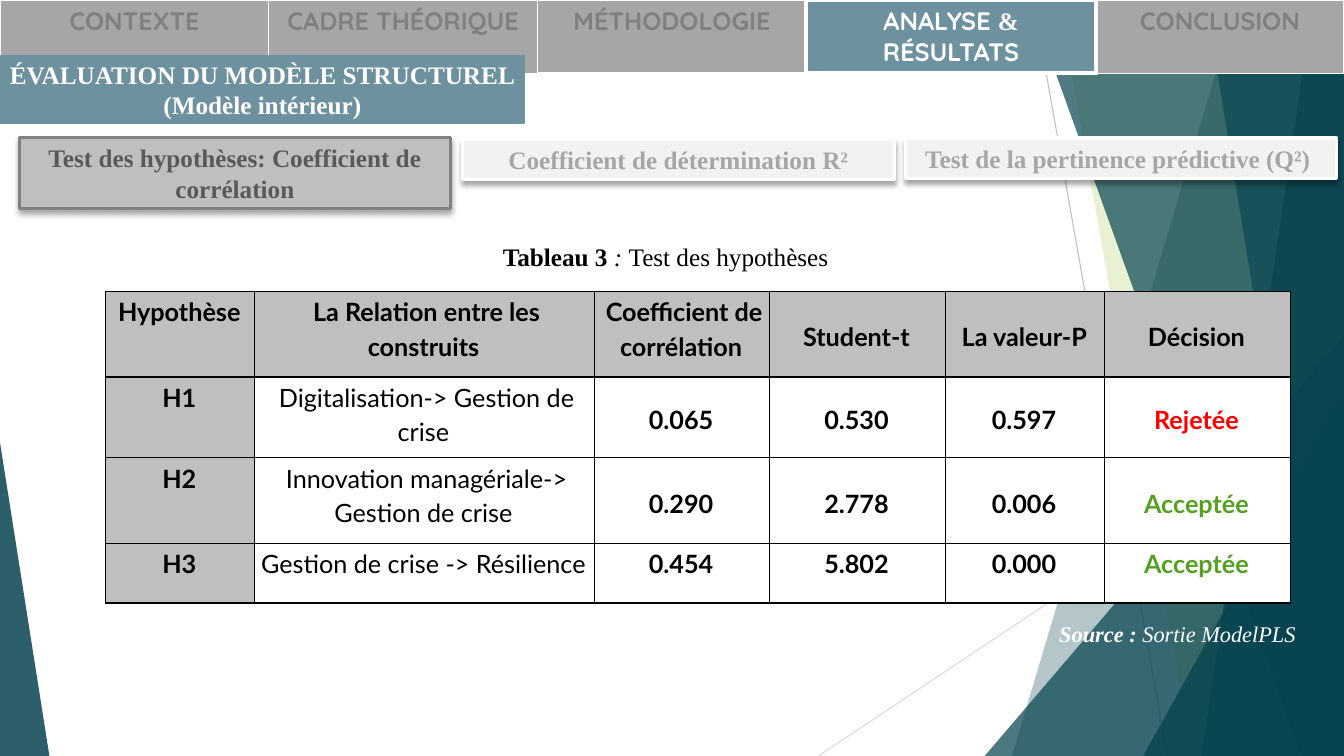
"""Builds the hypothesis-test results slide with its navigation bar and table."""
from dataclasses import dataclass

from lxml.etree import SubElement
from pptx import Presentation
from pptx.dml.color import RGBColor as RGB
from pptx.enum.shapes import MSO_CONNECTOR as Connector, MSO_SHAPE as Shape
from pptx.enum.text import MSO_ANCHOR as Anchor, PP_ALIGN as Align
from pptx.oxml.ns import qn
from pptx.util import Pt


@dataclass(frozen=True)
class Theme:
    teal: str = "084450"
    lime: str = "90C226"
    slate: str = "6E91A0"
    white: str = "FFFFFF"
    black: str = "000000"
    pale: str = "F2F2F2"
    silver: str = "BFBFBF"
    mist: str = "D9D9D9"
    ash: str = "A6A6A6"
    grey: str = "808080"
    charcoal: str = "595959"
    red: str = "FF0000"
    green: str = "54A021"
    serif: str = "Times New Roman"
    nav: str = "Quicksand"
    table: str = "Lato"
    body: int = 18
    note: int = 16


theme = Theme()


def paint(shape, fill, alpha=100, line=None, width=0):
    shape.shadow.inherit = False
    shape.fill.solid()
    shape.fill.fore_color.rgb = RGB.from_string(fill)
    if alpha < 100:
        tint = next(shape.element.spPr.iter(qn("a:srgbClr")))
        SubElement(tint, qn("a:alpha"), val=str(alpha * 1000))
    if line:
        shape.line.color.rgb = RGB.from_string(line)
        shape.line.width = Pt(width)
    else:
        shape.line.fill.background()


def write(frame, paragraphs, color, align=Align.CENTER, spacing=None, **base):
    frame.word_wrap = True
    for index, runs in enumerate(paragraphs):
        paragraph = frame.add_paragraph() if index else frame.paragraphs[0]
        paragraph.alignment = align
        paragraph.line_spacing = spacing
        for text, changes in runs:
            run = paragraph.add_run()
            run.text = text
            run.font.color.rgb = RGB.from_string(color)
            formats = {"name": theme.serif, "size": Pt(theme.body), "bold": True}
            for key, value in (formats | base | changes).items():
                setattr(run.font, key, value)


deck = Presentation()
deck.slide_width, deck.slide_height = Pt(960), Pt(540)
slide = deck.slides.add_slide(deck.slide_layouts[6])
shapes = slide.shapes

for x1, y1, x2, y2, color in [(738, 0, 833.8, 540, theme.silver),
                              (960, 290, 584.6, 540, theme.mist)]:
    ray = shapes.add_connector(Connector.STRAIGHT, Pt(x1), Pt(y1), Pt(x2), Pt(y2))
    ray.line.color.rgb = RGB.from_string(color)
    ray.line.width = Pt(0.75)
    SubElement(ray.element.spPr, qn("a:effectLst"))

facets = [
    ("band", (884.2, 722.9), theme.teal, 30),
    ("band", (756, 851.8), theme.lime, 20),
    ("triangle", (703.4, 239.8, 256.6, 300.2, 1), theme.teal, 72),
    ("band", (735.1, 929.5), theme.teal, 70),
    ("band", (938.2, 858.2), theme.teal, 70),
    ("band", (861.1, 949), theme.teal, 65),
    ("triangle", (816.5, 283, 143.5, 257, 1), theme.teal, 80),
    ("triangle", (0, 316.1, 35.3, 223.9, 0), theme.teal, 85),
]
for outline, places, color, alpha in facets:
    if outline == "band":
        top_x, bottom_x = places
        corners = [(960, -0.6), (960, 540), (bottom_x, 540)]
        builder = shapes.build_freeform(Pt(top_x), Pt(-0.6))
        builder.add_line_segments([(Pt(x), Pt(y)) for x, y in corners])
        facet = builder.convert_to_shape()
    else:
        *box, apex = places
        facet = shapes.add_shape(Shape.ISOSCELES_TRIANGLE, *map(Pt, box))
        facet.adjustments[0] = apex
    paint(facet, color, alpha)

sections = [
    [("CONTEXTE", {})],
    [("CADRE THÉORIQUE", {})],
    [("MÉTHODOLOGIE", {})],
    [("ANALYSE ", {}), ("& ", {"name": theme.serif}), ("RÉSULTATS", {})],
    [("CONCLUSION", {})],
]
active = 3
navigation = shapes.add_table(1, 5, 0, 0, Pt(960), Pt(28.8)).table
hypotheses = shapes.add_table(4, 6, Pt(75.6), Pt(208.2), Pt(846), Pt(222.5)).table

layouts = [
    (navigation, [192, 192, 192, 206.8, 177.2], [16.6], theme.white,
     [1, 1, 1.5, 3, 3, 1], [[1, 1, 1.5, 3, 1]] * 2),
    (hypotheses, [106.4, 242.6, 125.3, 125.3, 114, 132.4], [61, 57.8, 61.2, 42.5],
     theme.black, [1] * 7, [[1] * 6, [2] * 6, [1] * 6, [1] * 6, [1] * 6]),
]
for grid, widths, heights, color, uprights, levels in layouts:
    grid.first_row = grid.horz_banding = False
    for column, width in zip(grid.columns, widths):
        column.width = Pt(width)
    for row, height in zip(grid.rows, heights):
        row.height = Pt(height)
    for r in range(len(heights)):
        for c in range(len(widths)):
            edges = {"a:lnL": uprights[c], "a:lnR": uprights[c + 1],
                     "a:lnT": levels[r][c], "a:lnB": levels[r + 1][c]}
            properties = grid.cell(r, c)._tc.get_or_add_tcPr()
            for tag, weight in edges.items():
                edge = SubElement(properties, qn(tag), w=str(Pt(weight)))
                ink = SubElement(edge, qn("a:solidFill"))
                SubElement(ink, qn("a:srgbClr"), val=color)

for c, runs in enumerate(sections):
    cell = navigation.cell(0, c)
    cell.fill.solid()
    cell.fill.fore_color.rgb = RGB.from_string(theme.slate if c == active else theme.ash)
    write(cell.text_frame, [runs], theme.white if c == active else theme.grey,
          name=theme.nav)

results = [
    ["Hypothèse", "La Relation entre les construits", "Coefficient de corrélation",
     "Student-t", "La valeur-P", "Décision"],
    ["H1", "Digitalisation-> Gestion de crise", "0.065", "0.530", "0.597", "Rejetée"],
    ["H2", "Innovation managériale-> Gestion de crise", "0.290", "2.778", "0.006",
     "Acceptée"],
    ["H3", "Gestion de crise -> Résilience", "0.454", "5.802", "0.000", "Acceptée"],
]
verdicts = {"Rejetée": theme.red, "Acceptée": theme.green}
insets = {"margin_left": Pt(3.6), "margin_right": Pt(0.7),
          "margin_top": Pt(0.7), "margin_bottom": 0}
for r, values in enumerate(results):
    for c, value in enumerate(values):
        cell = hypotheses.cell(r, c)
        for key, inset in insets.items():
            setattr(cell, key, inset)
        if c >= (3 if r == 0 else 2) and r < 3:
            cell.vertical_anchor = Anchor.MIDDLE
        cell.fill.solid()
        shade = theme.silver if r == 0 or c == 0 else theme.white
        cell.fill.fore_color.rgb = RGB.from_string(shade)
        write(cell.text_frame, [[(value + " ", {})]], verdicts.get(value, theme.black),
              spacing=1.15, name=theme.table, bold=r == 0 or c != 1)

banner = shapes.add_shape(Shape.RECTANGLE, 0, Pt(40.3), Pt(374.4), Pt(47.5))
paint(banner, theme.slate, line=theme.slate, width=1.5)
banner.text_frame.vertical_anchor = Anchor.MIDDLE
banner.text_frame.margin_right = Pt(2)
write(banner.text_frame, [[("ÉVALUATION DU MODÈLE STRUCTUREL", {})],
                          [("(Modèle intérieur) ", {})]], theme.white)
banner.text_frame.paragraphs[0].alignment = Align.LEFT

steps = [
    ("Test des hypothèses: Coefficient de corrélation", 13.7, 97.9, 51.1,
     theme.silver, theme.grey, theme.charcoal),
    ("Coefficient de détermination R²", 330.5, 99.4, 28.8,
     theme.pale, theme.white, theme.ash),
    ("Test de la pertinence prédictive (Q²) ", 646.6, 98.6, 28.8,
     theme.pale, theme.white, theme.ash),
]
for title, left, top, height, fill, outline, color in steps:
    step = shapes.add_shape(Shape.RECTANGLE, Pt(left), Pt(top), Pt(308.2), Pt(height))
    paint(step, fill, line=outline, width=2.25)
    shadow = SubElement(step.element.spPr.find(qn("a:effectLst")), qn("a:outerShdw"),
                        blurRad=str(Pt(4)), dist=str(Pt(3)), dir="5400000",
                        rotWithShape="0")
    shade = SubElement(shadow, qn("a:srgbClr"), val=theme.black)
    SubElement(shade, qn("a:alpha"), val="35000")
    step.text_frame.vertical_anchor = Anchor.MIDDLE
    write(step.text_frame, [[(title, {})]], color)

caption = shapes.add_textbox(Pt(352.1), Pt(168.5), Pt(416.9), Pt(51.1))
write(caption.text_frame, [[("Tableau 3 ", {}), (": ", {"bold": False, "italic": True}),
                            ("Test des hypothèses", {"bold": False})]],
      theme.black, Align.LEFT)

source = shapes.add_textbox(Pt(749.5), Pt(439.2), Pt(236.2), Pt(26.6))
write(source.text_frame, [[("Source : ", {}), ("Sortie ModelPLS", {"bold": False})]],
      theme.white, Align.LEFT, size=Pt(theme.note), italic=True)

deck.save("out.pptx")
